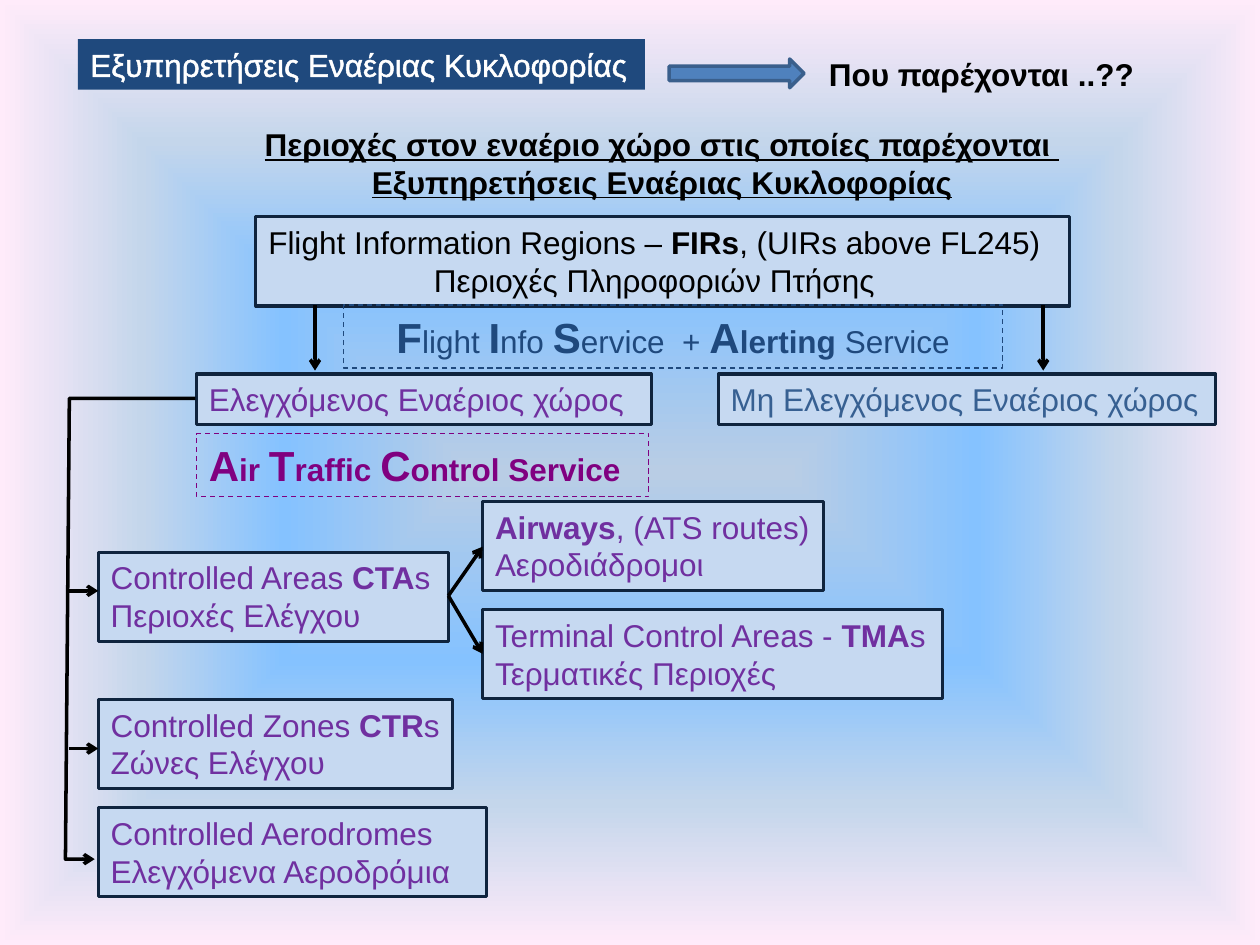
from pptx import Presentation
from pptx.dml.color import RGBColor
from pptx.enum.dml import MSO_LINE
from pptx.enum.shapes import MSO_CONNECTOR, MSO_SHAPE
from pptx.enum.text import MSO_AUTO_SIZE, PP_ALIGN
from pptx.oxml import parse_xml
from pptx.oxml.ns import nsdecls
from pptx.util import Cm, Pt

LEFT, CENTER = PP_ALIGN.LEFT, PP_ALIGN.CENTER
DASH = MSO_LINE.DASH
STRAIGHT = MSO_CONNECTOR.STRAIGHT
RIGHT_ARROW = MSO_SHAPE.RIGHT_ARROW
FIT = MSO_AUTO_SIZE.SHAPE_TO_FIT_TEXT

BLACK, WHITE, NAVY = "000000", "FFFFFF", "1F497D"
PURPLE, PLUM, STEEL = "7030A0", "800080", "376092"
BOX_FILL, BOX_EDGE = "C6D9F1", "0F243E"
BACKDROP = [(0, "B9CDE5"), (40, "85C2FF"), (70, "C4D6EB"), (100, "FFEBFA")]
BOLD, BIG = "bold", "big"


def rgb(code):
    return RGBColor.from_string(code)


class AirspaceSlide:
    font, size, big_size = "Arial", 18, 24

    def __init__(self, deck):
        self.page = deck.slides.add_slide(deck.slide_layouts[6])
        self.shapes = self.page.shapes

    def backdrop(self, stops):
        """Gradient that runs from the centre out to the slide edges."""
        self.page.background.fill.gradient()
        gradient = self.page.background._cSld.bg.bgPr[0]
        for child in list(gradient):
            gradient.remove(child)
        marks = "".join(f'<a:gs pos="{place * 1000}"><a:srgbClr val="{code}"/></a:gs>'
                        for place, code in stops)
        gradient.append(parse_xml(f'<a:gsLst {nsdecls("a")}>{marks}</a:gsLst>'))
        gradient.append(parse_xml(
            f'<a:path {nsdecls("a")} path="shape"><a:fillToRect l="50000" t="50000" '
            'r="50000" b="50000"/></a:path>'))

    def text(self, place, lines, color=BLACK, aligns=(LEFT, LEFT), wrap=True,
             bold=False, underline=False, outline=None):
        """Each line is a string or a list of (words, style) spans."""
        box = self.shapes.add_textbox(*map(Cm, place))
        frame = box.text_frame
        frame.word_wrap = wrap
        frame.auto_size = FIT
        for index, (line, align) in enumerate(zip(lines, aligns)):
            para = frame.add_paragraph() if index else frame.paragraphs[0]
            para.alignment = align
            for words, style in [(line, None)] if isinstance(line, str) else line:
                span = para.add_run()
                span.text = words
                font = span.font
                font.name = self.font
                font.size = Pt(self.big_size if style == BIG else self.size)
                font.bold = bold or style in (BOLD, BIG)
                font.underline = underline
                font.color.rgb = rgb(color)
                if outline:
                    code, width = outline
                    span._r.get_or_add_rPr().insert(0, parse_xml(
                        f'<a:ln {nsdecls("a")} w="{Pt(width)}"><a:solidFill>'
                        f'<a:srgbClr val="{code}"/></a:solidFill></a:ln>'))
        return box

    def panel(self, place, lines, color=PURPLE, **options):
        box = self.text(place, lines, color, **options)
        box.fill.solid()
        box.fill.fore_color.rgb = rgb(BOX_FILL)
        self.edge(box, BOX_EDGE, 1.75)

    def service(self, place, spans, color, align=LEFT):
        box = self.text(place, [spans], color, aligns=[align])
        self.edge(box, color, 0.75)
        box.line.dash_style = DASH

    def edge(self, item, color, width):
        item.line.color.rgb = rgb(color)
        item.line.width = Pt(width)

    def arrowhead(self, item):
        self.edge(item, BLACK, 2)
        item.line._get_or_add_ln().append(
            parse_xml(f'<a:tailEnd {nsdecls("a")} type="arrow"/>'))

    def arrow(self, start, end):
        line = self.shapes.add_connector(STRAIGHT, *map(Cm, start + end))
        self.arrowhead(line)
        line._element.spPr.append(parse_xml(f'<a:effectLst {nsdecls("a")}/>'))

    def bent_arrow(self, points):
        first, *rest = [(Cm(x), Cm(y)) for x, y in points]
        builder = self.shapes.build_freeform(*first)
        builder.add_line_segments(rest, close=False)
        route = builder.convert_to_shape()
        route.shadow.inherit = False
        route.fill.background()
        self.arrowhead(route)

    def block_arrow(self, place, fill, edge):
        shape = self.shapes.add_shape(RIGHT_ARROW, *map(Cm, place))
        shape.shadow.inherit = False
        shape.fill.solid()
        shape.fill.fore_color.rgb = rgb(fill)
        self.edge(shape, edge, 2)


def main():
    deck = Presentation()
    deck.slide_width, deck.slide_height = Cm(25.4), Cm(19.05)
    slide = AirspaceSlide(deck)
    slide.backdrop(BACKDROP)

    # Heading and question
    header = slide.text((1.57, 0.79, 11.43, 1.02), ["Εξυπηρετήσεις Εναέριας Κυκλοφορίας"],
                        WHITE, wrap=False, outline=(WHITE, 1.45))
    header.fill.solid()
    header.fill.fore_color.rgb = rgb(NAVY)
    slide.block_arrow((13.49, 1.19, 2.72, 0.58), "4F81BD", "3A5F8C")
    slide.text((16.46, 0.99, 6.73, 1.02), ["Που παρέχονται ..??"],
               wrap=False, bold=True, outline=("054697", 1))
    slide.text((4.75, 2.39, 17.2, 1.78),
               ["Περιοχές στον εναέριο χώρο στις οποίες παρέχονται ",
                "Εξυπηρετήσεις Εναέριας Κυκλοφορίας"],
               aligns=(CENTER, CENTER), bold=True, underline=True)

    # Flight information regions and the two kinds of airspace
    slide.panel((5.16, 4.37, 16.41, 1.8),
                [[("Flight Information Regions – ", None), ("FIRs", BOLD),
                  (", (UIRs above FL245)", None)], "Περιοχές Πληροφοριών Πτήσης"],
                BLACK, aligns=(LEFT, CENTER), wrap=False)
    slide.panel((3.96, 7.54, 9.17, 1.02), ["Ελεγχόμενος Εναέριος χώρος"])
    slide.panel((14.48, 7.54, 10.03, 1.02), ["Μη Ελεγχόμενος Εναέριος χώρος"],
                STEEL, wrap=False)

    # Services
    slide.service((6.93, 6.15, 13.28, 1.27),
                  [("F", BIG), ("light ", None), ("I", BIG), ("nfo ", None), ("S", BIG),
                   ("ervice  + ", None), ("A", BIG), ("lerting ", BOLD), ("Service", None)],
                  NAVY, CENTER)
    slide.service((3.96, 8.74, 9.12, 1.27),
                  [("A", BIG), ("ir ", BOLD), ("T", BIG), ("raffic ", BOLD), ("C", BIG),
                   ("ontrol Service", BOLD)], PLUM)

    # Parts of controlled airspace
    for place, lines in [
        ((1.98, 11.13, 7.06, 1.8),
         [[("Controlled Areas ", None), ("CTA", BOLD), ("s", None)], "Περιοxές Ελέγχου"]),
        ((1.98, 14.1, 7.14, 1.8),
         [[("Controlled Zones ", None), ("CTR", BOLD), ("s", None)], "Ζώνες Ελέγχου"]),
        ((1.98, 16.28, 7.82, 1.8), ["Controlled Aerodromes", "Ελεγχόμενα Αεροδρόμια"]),
        ((9.73, 12.29, 9.27, 1.8),
         [[("Terminal Control Areas - ", None), ("ΤΜΑ", BOLD), ("s", None)],
          "Τερματικές Περιοχές"]),
        ((9.73, 10.11, 6.88, 1.8),
         [[("Airways", BOLD), (", (ATS routes)", None)], "Αεροδιάδρομοι"]),
    ]:
        slide.panel(place, lines)

    # Arrows
    for y in (11.02, 13.18):
        slide.arrow((9.04, 12.01), (9.73, y))
    for x in (6.35, 21.03):
        slide.arrow((x, 6.15), (x, 7.47))
    for y in (11.91, 15.09):
        slide.arrow((1.4, y), (1.98, y))
    slide.bent_arrow([(3.94, 8.03), (1.4, 8.03), (1.32, 17.32), (1.91, 17.32)])

    deck.save("out.pptx")


if __name__ == "__main__":
    main()
